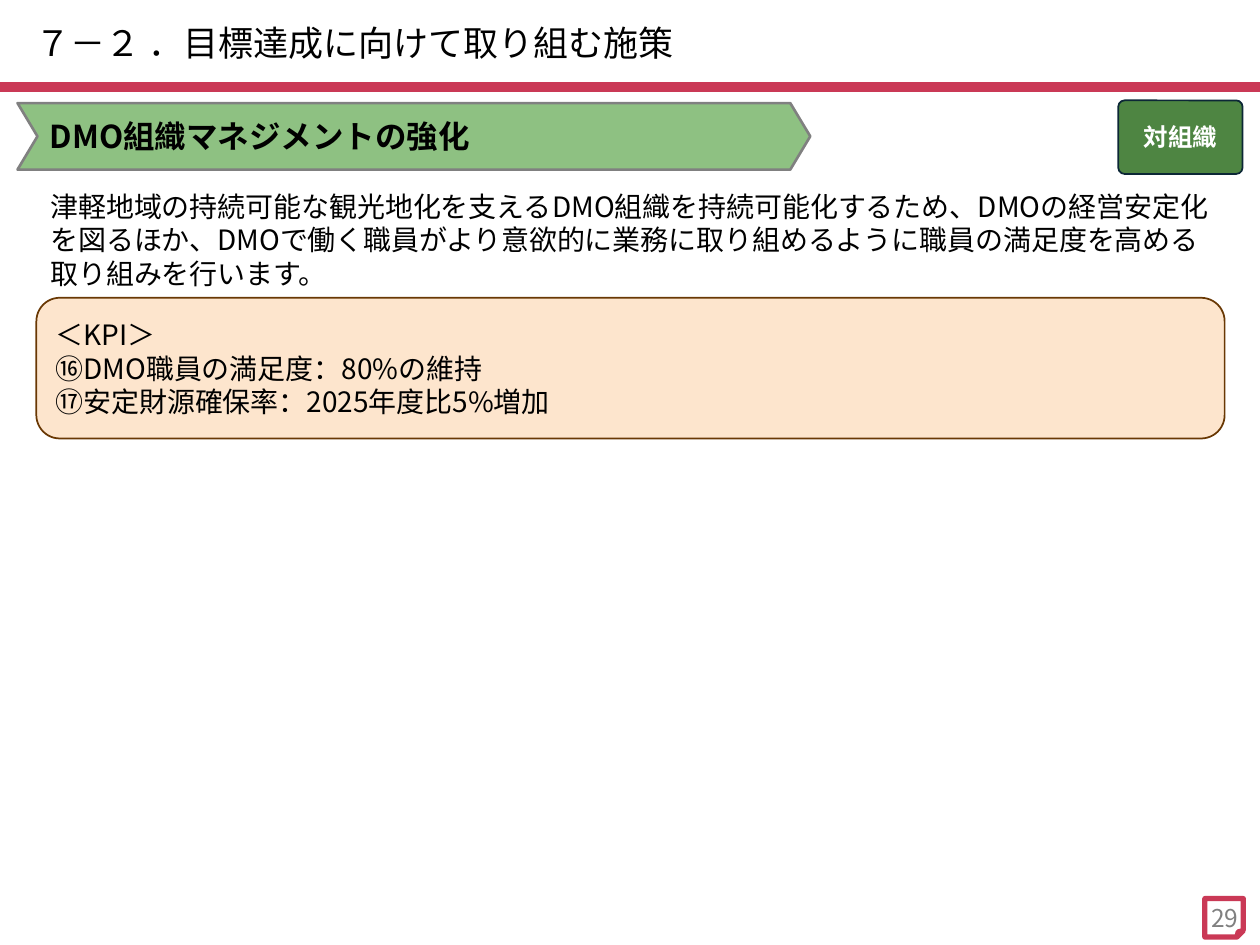
from dataclasses import dataclass

from lxml import etree
from pptx import Presentation
from pptx.dml.color import RGBColor
from pptx.enum import shapes, text
from pptx.oxml import ns
from pptx.util import Pt

SHAPE = shapes.MSO_SHAPE
ANCHOR = text.MSO_ANCHOR
ALIGN = text.PP_ALIGN


@dataclass(frozen=True)
class Theme:
    font: str = "Noto Sans CJK JP"
    ink: str = "000000"
    white: str = "FFFFFF"
    gray: str = "808080"
    accent: str = "CA3956"
    banner: str = "8EC182"
    tag: str = "4E8542"
    tag_line: str = "0C2736"
    panel: str = "FDE5CD"
    panel_line: str = "693804"
    title_size: float = 20
    heading_size: float = 18
    body_size: float = 16
    small_size: float = 14


THEME = Theme()


def rgb(value):
    return RGBColor.from_string(value)


def add_box(s, kind, box, fill=None, line=None, width=1, adj=None):
    sp = s.shapes.add_shape(kind, *map(Pt, box))
    sp.shadow.inherit = False
    if fill:
        sp.fill.solid()
        sp.fill.fore_color.rgb = rgb(fill)
    else:
        sp.fill.background()
    if line:
        sp.line.color.rgb = rgb(line)
        sp.line.width = Pt(width)
    else:
        sp.line.fill.background()
    if adj is not None:
        sp.adjustments[0] = adj
    return sp


def write(sp, content, size, color=THEME.ink, bold=False,
          align=ALIGN.LEFT, anchor=ANCHOR.MIDDLE, spacing=None):
    """Fill a shape with text, one paragraph per line of content."""
    tf = sp.text_frame
    tf.word_wrap = True
    tf.vertical_anchor = anchor
    tf.text = content
    for p in tf.paragraphs:
        p.alignment = align
        p.line_spacing = spacing
        for r in p.runs:
            r.font.name = THEME.font
            r.font.size = Pt(size)
            r.font.bold = bold
            r.font.color.rgb = rgb(color)
            ea = etree.SubElement(r.font._element, ns.qn("a:ea"))
            ea.set("typeface", THEME.font)


def add_header(s, box, title):
    """Title above a rule that runs along the bottom of the box."""
    x, y, w, h = box
    rule = s.shapes.add_connector(
        shapes.MSO_CONNECTOR.STRAIGHT, Pt(x), Pt(y + h), Pt(x + w), Pt(y + h))
    rule.line.color.rgb = rgb(THEME.accent)
    rule.line.width = Pt(6)
    etree.SubElement(rule._element.spPr, ns.qn("a:effectLst"))
    sp = s.shapes.add_textbox(Pt(x + 13), Pt(y + 6.5), Pt(467), Pt(38))
    write(sp, title, THEME.title_size, spacing=0.9)


def add_page_number(s, box, number):
    x, y, w, h = box
    add_box(s, SHAPE.FOLDED_CORNER, box, line=THEME.accent, width=3)
    sp = s.shapes.add_textbox(Pt(x - 8), Pt(y - 3.5), Pt(w + 17), Pt(h + 7))
    write(sp, number, THEME.small_size, THEME.gray, align=ALIGN.CENTER)


def add_heading(s, box, heading, tag):
    """Chevron banner on the left and audience tag on the right."""
    x, y, w, h = box
    sp = add_box(s, SHAPE.CHEVRON, (x, y + 1.5, 453, h - 4),
                 THEME.banner, THEME.gray, 1.5, 0.3)
    write(sp, heading, THEME.heading_size, bold=True)
    tag_w = 71
    sp = add_box(s, SHAPE.ROUNDED_RECTANGLE, (x + w - tag_w, y, tag_w, h),
                 THEME.tag, THEME.tag_line, adj=0.085)
    write(sp, tag, THEME.small_size, THEME.white, True, ALIGN.CENTER)


def add_policy(s, box, summary, kpis):
    """Summary text resting on top of the KPI panel."""
    x, y, w, h = box
    summary_h = 92
    sp = add_box(s, SHAPE.ROUNDED_RECTANGLE, (x, y, w, summary_h), adj=0.035)
    write(sp, summary, THEME.body_size, anchor=ANCHOR.BOTTOM)
    sp = add_box(s, SHAPE.ROUNDED_RECTANGLE,
                 (x, y + summary_h, w, h - summary_h),
                 THEME.panel, THEME.panel_line)
    write(sp, "\n".join(kpis), THEME.body_size)


def main():
    prs = Presentation()
    prs.slide_width, prs.slide_height = Pt(720), Pt(540)
    s = prs.slides.add_slide(prs.slide_layouts[6])
    add_header(s, (0, 0, 720, 49.7), "７－２ ．目標達成に向けて取り組む施策")
    add_page_number(s, (688.5, 513.5, 22, 22), "29")
    add_policy(
        s, (20.8, 78.2, 679, 172.4),
        "津軽地域の持続可能な観光地化を支えるDMO組織を持続可能化するため、"
        "DMOの経営安定化を図るほか、DMOで働く職員がより意欲的に業務に"
        "取り組めるように職員の満足度を高める取り組みを行います。",
        ["＜KPI＞",
         "⑯DMO職員の満足度：80%の維持",
         "⑰安定財源確保率：2025年度比5%増加"])
    add_heading(s, (10, 57.4, 700, 42), "DMO組織マネジメントの強化", "対組織")
    prs.save("out.pptx")


if __name__ == "__main__":
    main()
